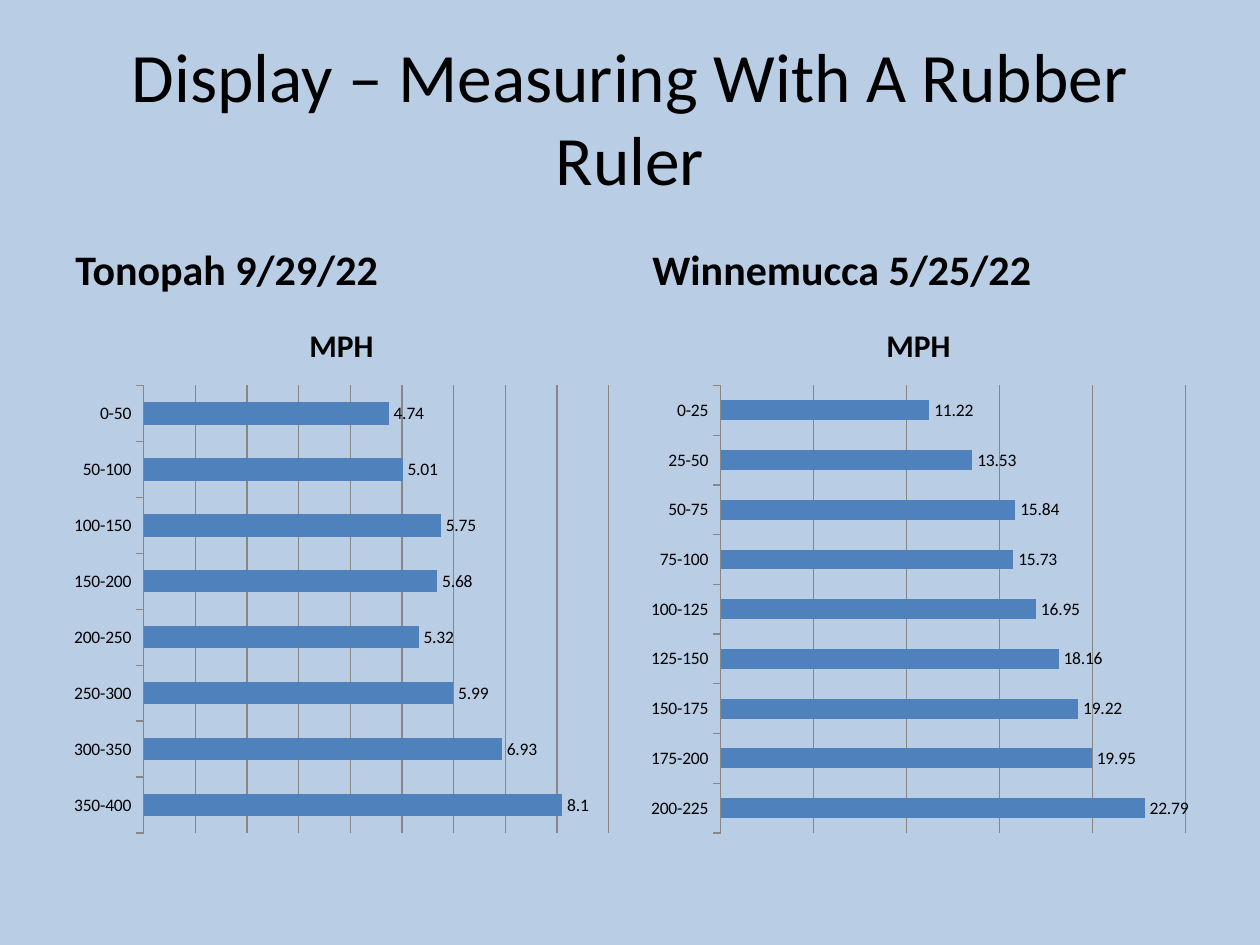
from pptx import Presentation
from pptx.chart.data import CategoryChartData
from pptx.dml.color import RGBColor
from pptx.enum.chart import XL_CHART_TYPE as ChartType
from pptx.enum.chart import XL_LABEL_POSITION as LabelPosition
from pptx.enum.chart import XL_TICK_MARK as TickMark
from pptx.enum.text import MSO_ANCHOR as Anchor
from pptx.enum.text import PP_ALIGN as Align
from pptx.util import Emu, Pt

# Content: bars are listed from top to bottom
TITLE = "Display – Measuring With A Rubber Ruler"
MEASURE = "MPH"
PANELS = [
    {"heading": "Tonopah 9/29/22", "step": 50, "axis_max": 9, "axis_unit": 1,
     "speeds": [4.74, 5.01, 5.75, 5.68, 5.32, 5.99, 6.93, 8.1]},
    {"heading": "Winnemucca 5/25/22", "step": 25, "axis_max": 25, "axis_unit": 5,
     "speeds": [11.22, 13.53, 15.84, 15.73, 16.95, 18.16, 19.22, 19.95, 22.79]},
]

FONT = "Calibri"
BLACK = RGBColor(0x00, 0x00, 0x00)
BACKGROUND = RGBColor(0xB9, 0xCD, 0xE5)
BAR_BLUE = RGBColor(0x4F, 0x81, 0xBD)
GRID_GRAY = RGBColor(0x87, 0x87, 0x87)

# Layout in px, 126 to the inch
PAGE_W, PAGE_H = 1260, 945
MARGIN = 63
PANEL_W = 557
TITLE_Y, TITLE_H = 38, 157
HEADING_Y, HEADING_H = 212, 88
CHART_Y, CHART_H = 300, 544


def px(length):
    return Emu(round(length * 914400 / 126))


def style_font(font, size, bold=False):
    font.name = FONT
    font.size = Pt(size)
    font.bold = bold
    font.color.rgb = BLACK


def add_text(page, text, area, size, bold=False, align=Align.LEFT, anchor=Anchor.MIDDLE):
    box = page.shapes.add_textbox(*map(px, area))
    frame = box.text_frame
    frame.word_wrap = True
    frame.vertical_anchor = anchor
    para = frame.paragraphs[0]
    para.alignment = align
    span = para.add_run()
    span.text = text
    style_font(span.font, size, bold)


def add_speed_chart(page, panel, area):
    step, speeds = panel["step"], panel["speeds"]
    ranges = [f"{i * step}-{(i + 1) * step}" for i in range(len(speeds))]
    data = CategoryChartData()
    data.categories = ranges[::-1]
    data.add_series(MEASURE, speeds[::-1])
    chart = page.shapes.add_chart(ChartType.BAR_CLUSTERED, *map(px, area), data).chart
    style_font(chart.font, 10)
    chart.has_legend = False

    # Chart title
    chart.has_title = True
    title = chart.chart_title
    title.include_in_layout = False
    title.text_frame.text = MEASURE
    style_font(title.text_frame.paragraphs[0].runs[0].font, 18, bold=True)

    # Axes
    ranges_axis, speed_axis = chart.category_axis, chart.value_axis
    ranges_axis.major_tick_mark = TickMark.OUTSIDE
    ranges_axis.minor_tick_mark = TickMark.NONE
    ranges_axis.format.line.color.rgb = GRID_GRAY
    speed_axis.visible = False
    speed_axis.minimum_scale = 0
    speed_axis.maximum_scale = panel["axis_max"]
    speed_axis.major_unit = panel["axis_unit"]
    speed_axis.has_major_gridlines = True
    speed_axis.major_gridlines.format.line.color.rgb = GRID_GRAY

    # Bars and their values
    plot = chart.plots[0]
    plot.gap_width = 150
    plot.vary_by_categories = False
    fill = plot.series[0].format.fill
    fill.solid()
    fill.fore_color.rgb = BAR_BLUE
    plot.has_data_labels = True
    labels = plot.data_labels
    labels.show_value = True
    labels.position = LabelPosition.OUTSIDE_END
    style_font(labels.font, 10)


def main():
    deck = Presentation()
    deck.slide_width, deck.slide_height = px(PAGE_W), px(PAGE_H)
    page = deck.slides.add_slide(deck.slide_layouts[6])
    page.background.fill.solid()
    page.background.fill.fore_color.rgb = BACKGROUND

    add_text(page, TITLE, (MARGIN, TITLE_Y, PAGE_W - 2 * MARGIN, TITLE_H), 39.6,
             align=Align.CENTER)

    # One panel at each side margin
    for panel, x in zip(PANELS, (MARGIN, PAGE_W - MARGIN - PANEL_W)):
        add_text(page, panel["heading"], (x, HEADING_Y, PANEL_W, HEADING_H), 24,
                 bold=True, anchor=Anchor.BOTTOM)
        add_speed_chart(page, panel, (x, CHART_Y, PANEL_W, CHART_H))

    deck.save("out.pptx")


if __name__ == "__main__":
    main()
